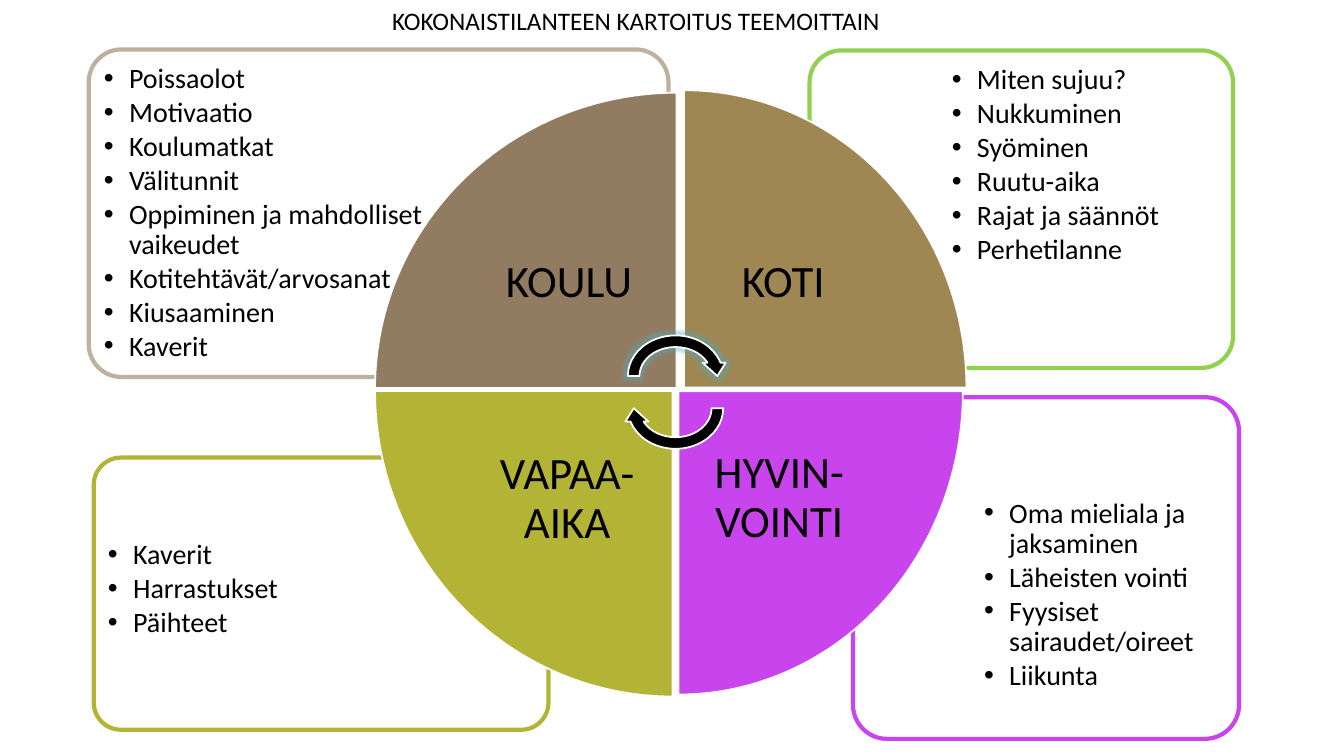
from lxml import etree
from pptx import Presentation
from pptx import util as u
from pptx.dml.color import RGBColor
from pptx.enum import shapes, text
from pptx.oxml.ns import qn

FONT = "Calibri"
BLACK, WHITE = "000000", "FFFFFF"
TITLE = "KOKONAISTILANTEEN KARTOITUS TEEMOITTAIN"

# Frames are (left, top, width, height) in inches.
# Topic cards: frame, line colour, list frame, bullets
CARDS = [
    ((8.46, 3.94, 3.83, 3.39), "C844EC", (9.68, 4.87, 2.53, 2.4),
     ["Oma mieliala ja jaksaminen", "Läheisten vointi",
      "Fyysiset sairaudet/oireet", "Liikunta"]),
    ((0.93, 4.54, 4.51, 2.7), "B3B435", (0.99, 5.28, 3.04, 1.91),
     ["Kaverit", "Harrastukset", "Päihteet"]),
    ((8.03, 0.5, 4.2, 3.15), "92D050", (9.36, 0.57, 2.81, 2.22),
     ["Miten sujuu?", "Nukkuminen", "Syöminen", "Ruutu-aika",
      "Rajat ja säännöt", "Perhetilanne"]),
    ((0.88, 0.49, 5.75, 3.25), "BFB19F", (0.95, 0.56, 3.88, 2.3),
     ["Poissaolot", "Motivaatio", "Koulumatkat", "Välitunnit",
      "Oppiminen ja mahdolliset vaikeudet", "Kotitehtävät/arvosanat",
      "Kiusaaminen", "Kaverit"]),
]
# Quarters clockwise, each turned 90° further: frame, colour, label frame, label
QUARTERS = [
    ((3.72, 0.92, 2.99, 2.93), "927C61", (4.59, 1.77, 2.11, 2.07), "KOULU"),
    ((6.71, 0.97, 2.95, 2.8), "9E8752", (6.78, 1.76, 1.98, 2.09), "KOTI"),
    ((6.73, 3.88, 2.82, 3.01), "C844EC", (6.73, 3.88, 2, 2.13), "HYVIN-VOINTI"),
    ((3.68, 3.92, 3.03, 2.95), "B3B435", (4.58, 3.88, 2.09, 2.15), "VAPAA-AIKA"),
]
# Arrows: top edge, rotation
ARROWS = [(3.27, 0), (3.59, 180)]


def color(hex_string):
    return RGBColor.from_string(hex_string)


def child(parent, tag, **attributes):
    return etree.SubElement(parent, qn(tag), attributes)


def add_shape(slide, kind, frame, fill, line, line_width, rotation=0):
    shape = slide.shapes.add_shape(kind, *map(u.Inches, frame))
    shape.shadow.inherit = False
    shape.rotation = rotation
    shape.fill.solid()
    shape.fill.fore_color.rgb = color(fill)
    shape.line.color.rgb = color(line)
    shape.line.width = u.Pt(line_width)
    return shape


def add_text(slide, frame, lines, size, inset, anchor, alignment,
             spacing=1.0, after=0):
    """Add a wrapped text box and return its paragraphs."""
    text_frame = slide.shapes.add_textbox(*map(u.Inches, frame)).text_frame
    text_frame.word_wrap = True
    text_frame.vertical_anchor = anchor
    text_frame.margin_left = text_frame.margin_right = u.Inches(inset)
    text_frame.margin_top = text_frame.margin_bottom = u.Inches(inset)
    text_frame.text = "\n".join(lines)
    for paragraph in text_frame.paragraphs:
        paragraph.alignment = alignment
        paragraph.line_spacing = spacing
        paragraph.space_after = u.Pt(after)
        font = paragraph.runs[0].font
        font.name, font.size = FONT, u.Pt(size)
        font.color.rgb = color(BLACK)
    return text_frame.paragraphs


def add_bullet(paragraph):
    properties = paragraph._p.get_or_add_pPr()
    properties.set("marL", str(u.Inches(0.25)))
    properties.set("indent", str(-u.Inches(0.25)))
    child(properties, "a:buFont", typeface="Arial")
    child(properties, "a:buChar", char="•")


def add_glow(shape, hex_string):
    effects = shape._element.spPr.find(qn("a:effectLst"))
    glow = child(effects, "a:glow", rad=str(u.Pt(5)))
    tint = child(glow, "a:srgbClr", val=hex_string)
    child(tint, "a:alpha", val="40000")


def main():
    presentation = Presentation()
    presentation.slide_width = u.Inches(13.33)
    presentation.slide_height = u.Inches(7.5)
    slide = presentation.slides.add_slide(presentation.slide_layouts[6])
    kinds, anchors, align = shapes.MSO_SHAPE, text.MSO_ANCHOR, text.PP_ALIGN

    for frame, line, list_frame, bullets in CARDS:
        card = add_shape(slide, kinds.ROUNDED_RECTANGLE, frame, WHITE, line, 3)
        card.adjustments[0] = 0.1
        fill = card._element.spPr.find(qn("a:solidFill"))
        child(fill[0], "a:alpha", val="90000")
        for paragraph in add_text(slide, list_frame, bullets, 20, 0.08,
                                  anchors.TOP, align.LEFT, 0.9, 2.6):
            add_bullet(paragraph)

    for turn, (frame, fill, label_frame, label) in enumerate(QUARTERS):
        add_shape(slide, kinds.PIE_WEDGE, frame, fill, WHITE, 1.25, turn * 90)
        add_text(slide, label_frame, [label], 32, 0.25,
                 anchors.MIDDLE, align.CENTER, 0.9)

    arrows = [add_shape(slide, kinds.CIRCULAR_ARROW, (6.17, top, 1.06, 0.92),
                        BLACK, WHITE, 1.25, rotation)
              for top, rotation in ARROWS]
    add_glow(arrows[0], "4BACC6")

    add_text(slide, (3.79, 0, 5.5, 0.4), [TITLE], 18, 0.1,
             anchors.MIDDLE, align.LEFT)
    presentation.save("out.pptx")


if __name__ == "__main__":
    main()
